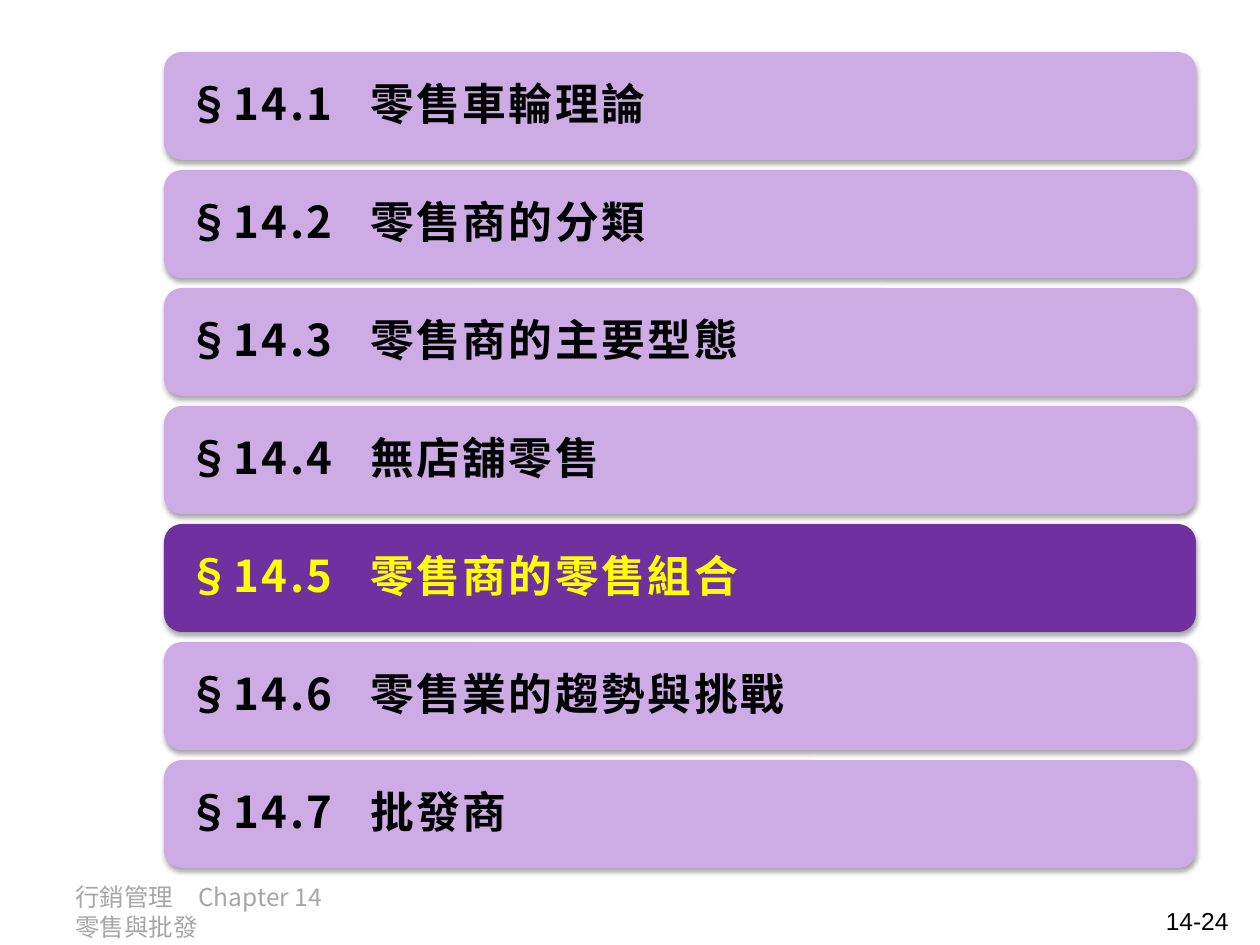
from lxml import etree
from pptx import Presentation
from pptx.dml.color import RGBColor
from pptx.enum.shapes import MSO_SHAPE as SHAPE
from pptx.enum.text import MSO_ANCHOR as ANCHOR, PP_ALIGN as ALIGN
from pptx.oxml import parse_xml
from pptx.oxml.ns import nsdecls, qn
from pptx.util import Emu, Pt

LILAC = RGBColor(0xCD, 0xAC, 0xE6)
PURPLE = RGBColor(0x70, 0x30, 0xA0)
YELLOW = RGBColor(0xFF, 0xFF, 0x00)
BLACK = RGBColor(0, 0, 0)
GRAY = RGBColor(0xA6, 0xA6, 0xA6)
CJK = "Noto Sans CJK SC"

SECTIONS = ["零售車輪理論", "零售商的分類", "零售商的主要型態", "無店舖零售",
            "零售商的零售組合", "零售業的趨勢與挑戰", "批發商"]
CURRENT = 5
BAR_LEFT, BAR_TOP, BAR_W, BAR_H, BAR_PITCH = 164, 52, 1032, 108, 118
BAR_INSET, TITLE_TAB = 18, 183

SHADOW = (f'<a:effectLst {nsdecls("a")}><a:outerShdw blurRad="40000" dist="23000" '
          'dir="5400000" rotWithShape="0"><a:srgbClr val="000000">'
          '<a:alpha val="35000"/></a:srgbClr></a:outerShdw></a:effectLst>')


def px(n):
    return Emu(round(n * 914400 / 126))


def add_run(p, text, size, color, latin=CJK, bold=False):
    """Append a run with separate Latin and East Asian typefaces."""
    r = p.add_run()
    r.text = text
    r.font.size, r.font.bold, r.font.name = Pt(size), bold, latin
    r.font.color.rgb = color
    etree.SubElement(r.font._element, qn("a:ea")).set("typeface", CJK)
    return r


prs = Presentation()
prs.slide_width, prs.slide_height = px(1260), px(945)
s = prs.slides.add_slide(prs.slide_layouts[6])

# Footer and page number
footer = s.shapes.add_textbox(px(63), px(876), px(309), px(50))
footer.text_frame.word_wrap = True
p = footer.text_frame.paragraphs[0]
add_run(p, "行銷管理　Chapter 14", 14, GRAY)
p.add_line_break()
add_run(p, "零售與批發", 14, GRAY)

page = s.shapes.add_textbox(px(948), px(900), px(293), px(37))
page.text_frame.word_wrap = True
p = page.text_frame.paragraphs[0]
p.alignment = ALIGN.RIGHT
add_run(p, "14-24", 14, BLACK, "Arial")

# Section bars
for i, title in enumerate(SECTIONS):
    number = i + 1
    current = number == CURRENT
    bar = s.shapes.add_shape(SHAPE.ROUNDED_RECTANGLE, px(BAR_LEFT),
                             px(BAR_TOP + i * BAR_PITCH), px(BAR_W), px(BAR_H))
    bar.fill.solid()
    bar.fill.fore_color.rgb = PURPLE if current else LILAC
    bar.line.fill.background()
    bar._element.spPr.append(parse_xml(SHADOW))

    tf = bar.text_frame
    tf.word_wrap = True
    tf.vertical_anchor = ANCHOR.MIDDLE
    tf.margin_left = tf.margin_right = px(BAR_INSET)
    p = tf.paragraphs[0]
    p.alignment = ALIGN.LEFT
    p.line_spacing = 0.9
    p.space_after = Pt(9)
    tabs = etree.SubElement(p._p.get_or_add_pPr(), qn("a:tabLst"))
    etree.SubElement(tabs, qn("a:tab"), pos=str(px(TITLE_TAB)), algn="l")
    color = YELLOW if current else BLACK
    for text, latin in ((f"§14.{number}\t", CJK), (title, "Arial")):
        r = add_run(p, text, 25, color, latin, bold=True)
        r.font._element.set("spc", "150")

prs.save("out.pptx")
